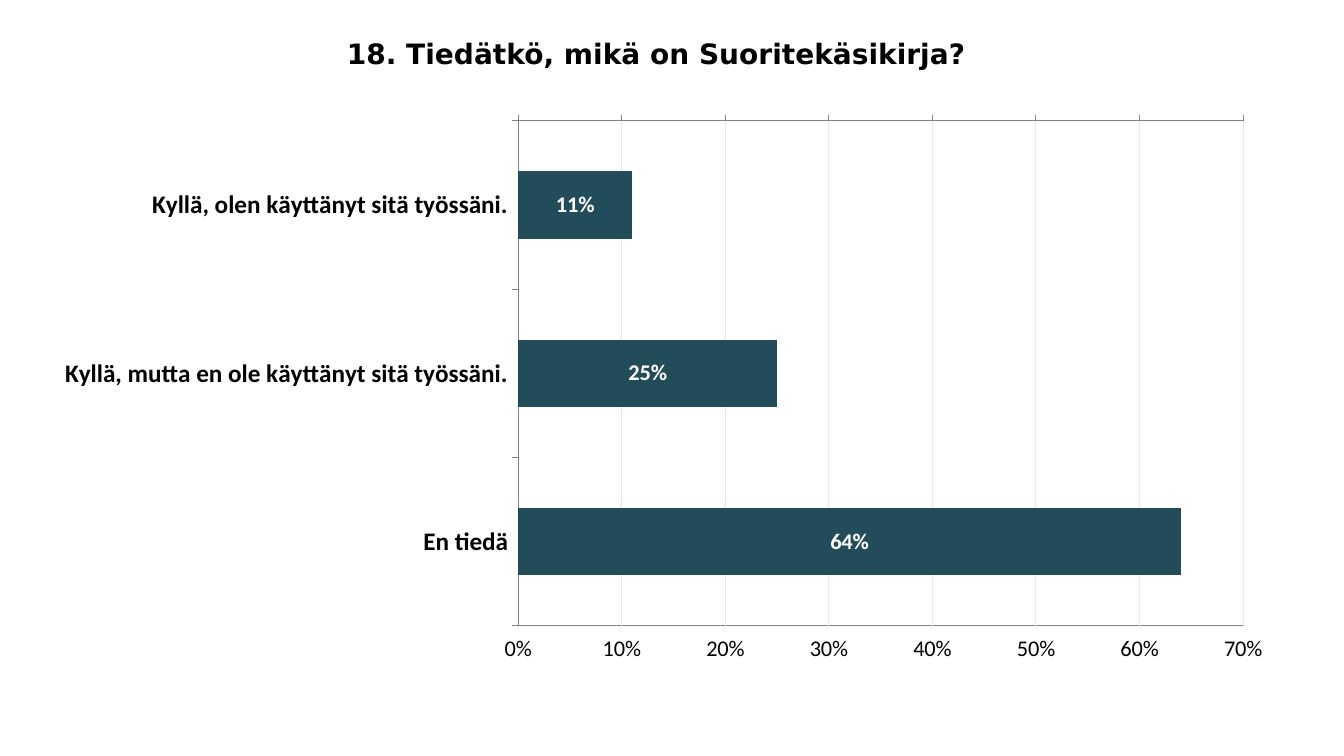
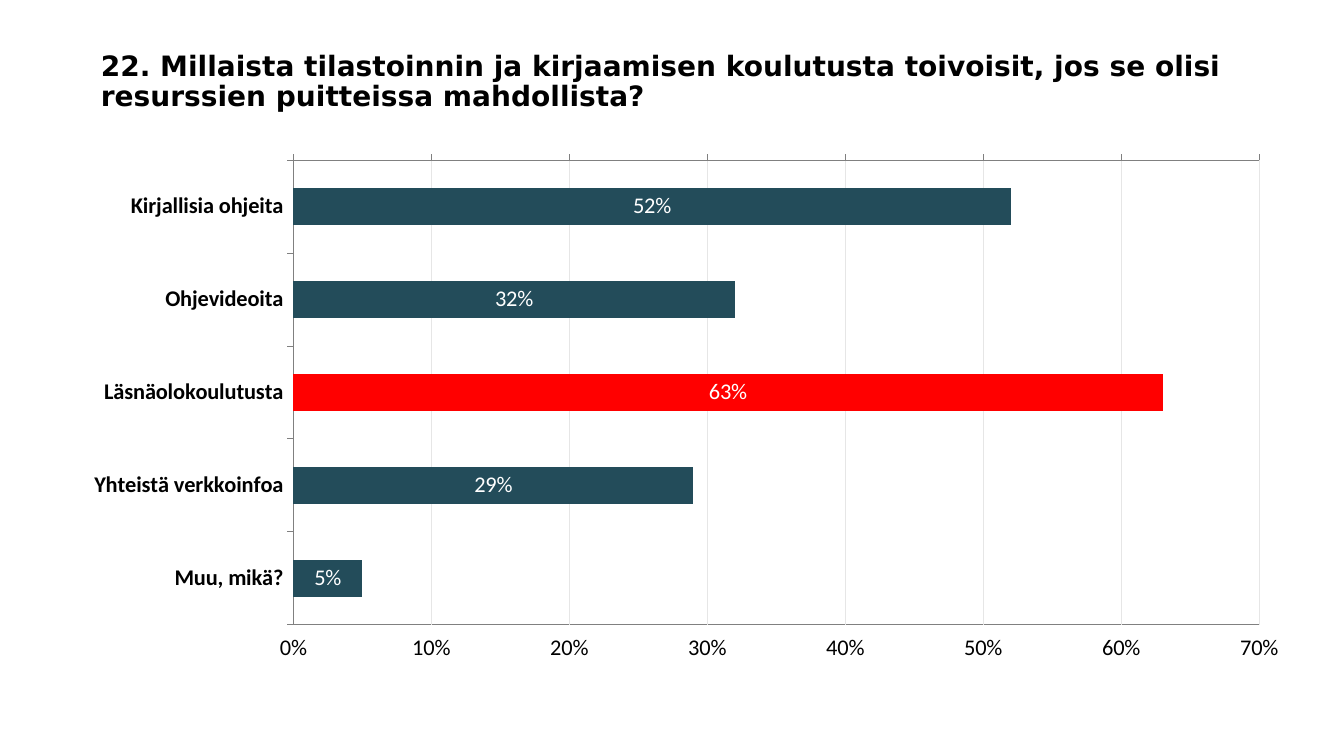
from pptx import Presentation
from pptx.chart.data import CategoryChartData
from pptx.dml.color import RGBColor
from pptx.enum.chart import (XL_CHART_TYPE, XL_LABEL_POSITION, XL_TICK_LABEL_POSITION,
                             XL_TICK_MARK)
from pptx.enum.text import MSO_ANCHOR, MSO_AUTO_SIZE, PP_ALIGN
from pptx.oxml import parse_xml
from pptx.oxml.ns import nsdecls
from pptx.util import Pt

PX = 9144  # 100 px to the inch
WHITE, BLACK, TEAL, RED = "FFFFFF", "000000", "234C5A", "FF0000"
AXIS_GREY, GRID_GREY = "808080", "E6E6E6"
TITLE_FONT, CHART_FONT = "DejaVu Sans", "Calibri"


def rgb(color):
    return RGBColor.from_string(color)


def px(*lengths):
    return [n * PX for n in lengths]


def set_font(font, size, color=BLACK, bold=False, name=CHART_FONT):
    font.name, font.size, font.bold = name, Pt(size), bold
    font.color.rgb = rgb(color)


def set_line(line, color, width=0.75):
    line.color.rgb = rgb(color)
    line.width = Pt(width)


def add_title(s, text, box):
    sp = s.shapes.title
    sp.left, sp.top, sp.width, sp.height = px(*box)
    tf = sp.text_frame
    tf.word_wrap = True
    tf.auto_size = MSO_AUTO_SIZE.NONE
    tf.vertical_anchor = MSO_ANCHOR.MIDDLE
    p = tf.paragraphs[0]
    p.alignment = PP_ALIGN.LEFT
    p.line_spacing = 0.9
    r = p.add_run()
    r.text = text
    set_font(r.font, 20, bold=True, name=TITLE_FONT)


def frame_plot(chart, box, plot_box):
    """Fix the inner plot area at plot_box (slide px) and give it a border."""
    left, top, width, height = box
    x, y, w, h = plot_box
    fractions = {"x": (x - left) / width, "y": (y - top) / height,
                 "w": w / width, "h": h / height}
    sizes = "".join(f'<c:{key} val="{val:.4f}"/>' for key, val in fractions.items())
    plot_area = chart.element.xpath("c:chart/c:plotArea")[0]
    for old in plot_area.xpath("c:layout"):
        plot_area.remove(old)
    plot_area.insert(0, parse_xml(
        f'<c:layout {nsdecls("c")}><c:manualLayout><c:layoutTarget val="inner"/>'
        f'<c:xMode val="edge"/><c:yMode val="edge"/>{sizes}</c:manualLayout></c:layout>'))
    plot_area.append(parse_xml(
        f'<c:spPr {nsdecls("c", "a")}><a:solidFill><a:srgbClr val="{WHITE}"/></a:solidFill>'
        f'<a:ln w="9525"><a:solidFill><a:srgbClr val="{AXIS_GREY}"/></a:solidFill></a:ln>'
        '</c:spPr>'))


def style_axis(axis, size, bold):
    axis.major_tick_mark = XL_TICK_MARK.OUTSIDE
    axis.minor_tick_mark = XL_TICK_MARK.NONE
    set_line(axis.format.line, AXIS_GREY)
    set_font(axis.tick_labels.font, size, bold=bold)


def style_axes(chart, category_size):
    cat, val = chart.category_axis, chart.value_axis
    style_axis(cat, category_size, True)
    cat.reverse_order = True
    cat.has_major_gridlines = False
    style_axis(val, 16, False)
    val.minimum_scale, val.maximum_scale, val.major_unit = 0, 0.7, 0.1
    val.tick_label_position = XL_TICK_LABEL_POSITION.HIGH
    val.tick_labels.number_format = "0%"
    val.tick_labels.number_format_is_linked = False
    val.has_major_gridlines = True
    set_line(val.major_gridlines.format.line, GRID_GREY)


def add_bars(s, answers, box, plot_box, category_size=16, bold_labels=False, highlight=None):
    data = CategoryChartData(number_format="0%")
    data.categories = list(answers)
    data.add_series("Series 1", list(answers.values()))
    chart = s.shapes.add_chart(XL_CHART_TYPE.BAR_CLUSTERED, *px(*box), data).chart
    chart.has_title = chart.has_legend = False
    set_font(chart.font, 16)
    style_axes(chart, category_size)

    plot = chart.plots[0]
    plot.gap_width = 150
    plot.vary_by_categories = False
    series = plot.series[0]
    series.format.fill.solid()
    series.format.fill.fore_color.rgb = rgb(TEAL)
    if highlight in answers:
        fill = series.points[list(answers).index(highlight)].format.fill
        fill.solid()
        fill.fore_color.rgb = rgb(RED)

    labels = series.data_labels
    labels.show_value = True
    labels.position = XL_LABEL_POSITION.CENTER
    labels.number_format = "#%"
    labels.number_format_is_linked = False
    set_font(labels.font, 16, WHITE, bold_labels)
    frame_plot(chart, box, plot_box)


def main():
    prs = Presentation()
    prs.slide_width, prs.slide_height = px(1333, 750)
    title_only = prs.slide_layouts[5]

    s = prs.slides.add_slide(title_only)
    add_title(s, "18. Tiedätkö, mikä on Suoritekäsikirja?", (334, 12, 666, 86))
    add_bars(s, {"Kyllä, olen käyttänyt sitä työssäni.": 0.11,
                 "Kyllä, mutta en ole käyttänyt sitä työssäni.": 0.25,
                 "En tiedä": 0.64},
             (40, 109, 1236, 561), (514, 120, 719, 501),
             category_size=18, bold_labels=True)

    s = prs.slides.add_slide(title_only)
    add_title(s, "22. Millaista tilastoinnin ja kirjaamisen koulutusta toivoisit, "
                 "jos se olisi resurssien puitteissa mahdollista?", (90, 33, 1154, 98))
    add_bars(s, {"Kirjallisia ohjeita": 0.52,
                 "Ohjevideoita": 0.32,
                 "Läsnäolokoulutusta": 0.63,
                 "Yhteistä verkkoinfoa": 0.29,
                 "Muu, mikä?": 0.05},
             (65, 148, 1228, 519), (291, 159, 958, 461),
             highlight="Läsnäolokoulutusta")

    prs.save("out.pptx")


if __name__ == "__main__":
    main()
